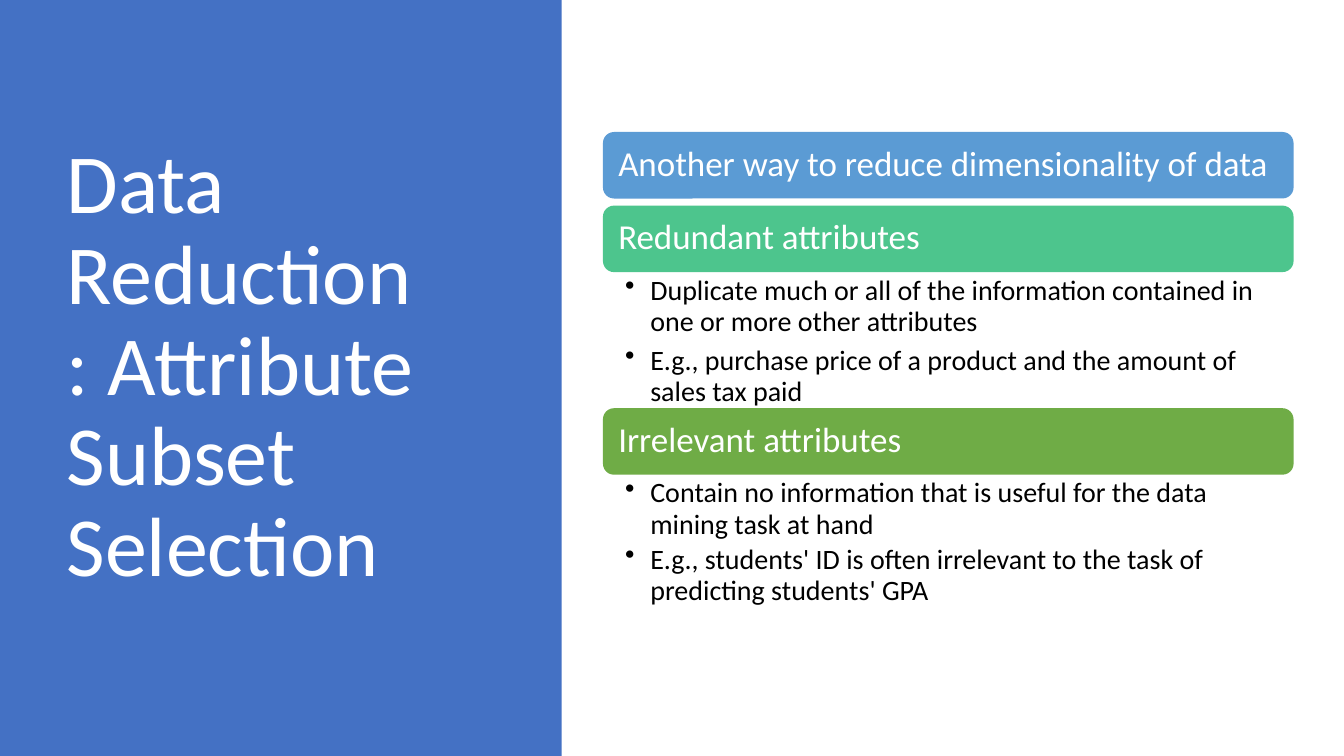
import pptx
import pptx.util
import pptx.dml.color
import pptx.enum.shapes
import pptx.enum.text
import pptx.oxml.ns
import lxml.etree

Inches = pptx.util.Inches
Pt = pptx.util.Pt
ANCHOR = pptx.enum.text.MSO_ANCHOR
LEFT = pptx.enum.text.PP_ALIGN.LEFT
SHAPE = pptx.enum.shapes.MSO_SHAPE

BAR_LEFT, BAR_WIDTH, BAR_HEIGHT = 5.98, 6.85, 0.66

# Heading, bar top, bar colour, space between bullets in points, bullets
sections = [
    ("Another way to reduce dimensionality of data", 1.31, "5B9BD4", 0, []),
    ("Redundant attributes", 2.04, "4DC58D", 5, [
        "Duplicate much or all of the information contained in one or more other attributes",
        "E.g., purchase price of a product and the amount of sales tax paid",
    ]),
    ("Irrelevant attributes", 4.05, "6FAC46", 2.5, [
        "Contain no information that is useful for the data mining task at hand",
        "E.g., students' ID is often irrelevant to the task of predicting students' GPA",
    ]),
]


def add_filled_shape(kind, left, top, width, height, color):
    shape = slide.shapes.add_shape(
        kind, Inches(left), Inches(top), Inches(width), Inches(height))
    shape.shadow.inherit = False
    shape.fill.solid()
    shape.fill.fore_color.rgb = pptx.dml.color.RGBColor.from_string(color)
    shape.line.fill.background()
    return shape


def write(para, text, size, color):
    para.alignment = LEFT
    span = para.add_run()
    span.text = text
    span.font.name = "Calibri"
    span.font.size = Pt(size)
    span.font.color.rgb = pptx.dml.color.RGBColor.from_string(color)


deck = pptx.Presentation()
deck.slide_width, deck.slide_height = Inches(13.33), Inches(7.5)
slide = deck.slides.add_slide(deck.slide_layouts[5])

# Title on the blue panel
panel = add_filled_shape(SHAPE.RECTANGLE, 0, 0, 5.57, 7.5, "4471C4")
title = slide.shapes.title
panel.element.addnext(title.element)
title.left, title.top = Inches(0.66), Inches(1.4)
title.width, title.height = Inches(3.58), Inches(4.5)
frame = title.text_frame
frame.margin_left = frame.margin_right = frame.margin_top = frame.margin_bottom = 0
frame.word_wrap = True
frame.auto_size = pptx.enum.text.MSO_AUTO_SIZE.NONE
frame.vertical_anchor = ANCHOR.TOP
frame.paragraphs[0].line_spacing = 0.9
write(frame.paragraphs[0], "Data Reduction: Attribute Subset Selection", 60, "FFFFFF")

# Heading bars, each with its bullets below
for heading, top, color, gap, bullets in sections:
    bar = add_filled_shape(
        SHAPE.ROUNDED_RECTANGLE, BAR_LEFT, top, BAR_WIDTH, BAR_HEIGHT, color)
    frame = bar.text_frame
    frame.margin_left, frame.margin_right = Inches(0.12), Inches(0.1)
    frame.margin_top, frame.margin_bottom = 0, Inches(0.06)
    frame.word_wrap = True
    frame.vertical_anchor = ANCHOR.MIDDLE
    write(frame.paragraphs[0], heading, 25, "FFFFFF")

    if not bullets:
        continue
    box = slide.shapes.add_textbox(
        Inches(BAR_LEFT + 0.12), Inches(top + BAR_HEIGHT + 0.02), Inches(6.4), Inches(1.33))
    frame = box.text_frame
    frame.margin_left = frame.margin_right = frame.margin_top = frame.margin_bottom = 0
    frame.word_wrap = True
    for index, text in enumerate(bullets):
        para = frame.add_paragraph() if index else frame.paragraphs[0]
        para.line_spacing = Pt(22.5)
        para.space_before = Pt(gap if index else 0)
        write(para, text, 20, "000000")
        properties = para._p.get_or_add_pPr()
        properties.set("marL", str(Inches(0.35)))
        properties.set("indent", str(Inches(-0.25)))
        bullet = lxml.etree.SubElement(properties, pptx.oxml.ns.qn("a:buChar"))
        bullet.set("char", "•")

deck.save("out.pptx")
